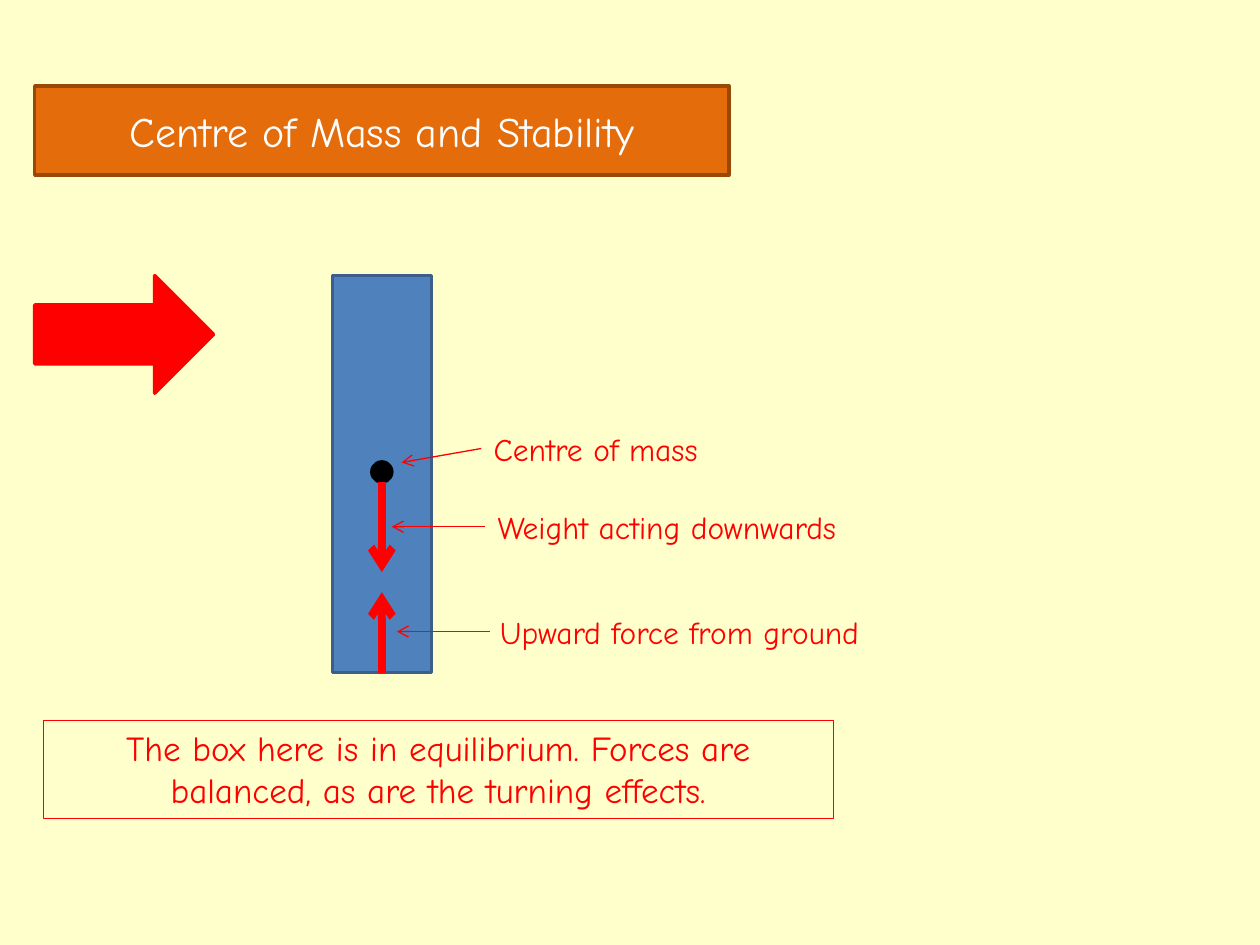
from dataclasses import dataclass

from lxml import etree
from pptx import Presentation
from pptx.dml.color import RGBColor
from pptx.enum import shapes, text
from pptx.oxml import ns
from pptx.util import Pt

CREAM = RGBColor(0xFF, 0xFF, 0xCC)
ORANGE = RGBColor(0xE4, 0x6C, 0x0A)
BROWN = RGBColor(0x98, 0x48, 0x07)
BLUE = RGBColor(0x4F, 0x81, 0xBD)
DARK_BLUE = RGBColor(0x3A, 0x5F, 0x8C)
RED = RGBColor(0xFF, 0x00, 0x00)
BLACK = RGBColor(0x00, 0x00, 0x00)
WHITE = RGBColor(0xFF, 0xFF, 0xFF)
FONT = "Comic Neue"
FORCE_X = 218.2


@dataclass
class Block:
    kind: shapes.MSO_SHAPE
    left: float
    top: float
    width: float
    height: float
    fill: RGBColor | None
    line: RGBColor | None
    line_width: float = 2


@dataclass
class Label:
    wording: str
    left: float
    top: float
    width: float


@dataclass
class Arrow:
    start: tuple[float, float]
    end: tuple[float, float]
    width: float = 0.75


BACKGROUND = Block(shapes.MSO_SHAPE.RECTANGLE, 0, 0, 720, 540, CREAM, None)
BOX = Block(shapes.MSO_SHAPE.RECTANGLE, 190, 157.5, 56.7, 226.8, BLUE, DARK_BLUE)
PUSH = Block(shapes.MSO_SHAPE.RIGHT_ARROW, 19.8, 157.5, 102.2, 67.2, RED, RED)
CAPTION = Block(shapes.MSO_SHAPE.RECTANGLE, 24.8, 411.8, 451.4, 55.8, None, RED, 0.75)
CENTRE = Block(shapes.MSO_SHAPE.OVAL, FORCE_X - 5.7, 264, 11.4, 11.4, BLACK, BLACK)

LABELS = [
    Label("Centre of mass", 275, 242.2, 158.4),
    Label("Weight acting downwards", 277.2, 286.9, 236.2),
    Label("Upward force from ground", 278.6, 347, 251.3),
]
ARROWS = [
    Arrow((275, 256.3), (229.5, 264.3)),
    Arrow((FORCE_X, 275.4), (FORCE_X, 326.9), 4.5),
    Arrow((277.2, 301), (223.9, 301)),
    Arrow((FORCE_X, 384.3), (FORCE_X, 338.4), 4.5),
    Arrow((280.1, 360.9), (226.8, 360.9)),
]


def write(frame, wording: str, size: float, color: RGBColor, align) -> None:
    frame.word_wrap = True
    para = frame.paragraphs[0]
    para.alignment = align
    span = para.add_run()
    span.text = wording
    span.font.name = FONT
    span.font.size = Pt(size)
    span.font.color.rgb = color


def paint(shape, fill: RGBColor | None, line: RGBColor | None, width: float) -> None:
    if fill is None:
        shape.fill.background()
    else:
        shape.fill.solid()
        shape.fill.fore_color.rgb = fill
    if line is None:
        shape.line.fill.background()
    else:
        shape.line.color.rgb = line
        shape.line.width = Pt(width)


def draw_block(slide, block: Block):
    shape = slide.shapes.add_shape(
        block.kind, Pt(block.left), Pt(block.top), Pt(block.width), Pt(block.height))
    shape.shadow.inherit = False
    paint(shape, block.fill, block.line, block.line_width)
    return shape


def draw_title(slide) -> None:
    """Turn the title placeholder into the rounded banner, above the background."""
    title = slide.shapes.title
    title.left, title.top, title.width, title.height = Pt(19.8), Pt(49), Pt(396.7), Pt(51.1)
    outline = etree.SubElement(title.element.spPr, ns.qn("a:prstGeom"), prst="roundRect")
    etree.SubElement(outline, ns.qn("a:avLst"))
    paint(title, ORANGE, BROWN, 2)
    frame = title.text_frame
    frame.auto_size = text.MSO_AUTO_SIZE.NONE
    frame.vertical_anchor = text.MSO_ANCHOR.MIDDLE
    write(frame, "Centre of Mass and Stability", 24, WHITE, text.PP_ALIGN.CENTER)
    slide.shapes.element.append(title.element)


def draw_label(slide, label: Label) -> None:
    box = slide.shapes.add_textbox(
        Pt(label.left), Pt(label.top), Pt(label.width), Pt(29.1))
    write(box.text_frame, label.wording, 18, RED, text.PP_ALIGN.LEFT)
    box.text_frame.auto_size = text.MSO_AUTO_SIZE.SHAPE_TO_FIT_TEXT


def draw_arrow(slide, arrow: Arrow) -> None:
    connector = slide.shapes.add_connector(
        shapes.MSO_CONNECTOR.STRAIGHT, *map(Pt, arrow.start + arrow.end))
    connector.line.color.rgb = RED
    connector.line.width = Pt(arrow.width)
    etree.SubElement(connector.line._get_or_add_ln(), ns.qn("a:tailEnd"), type="arrow")
    etree.SubElement(connector.element.spPr, ns.qn("a:effectLst"))


def main() -> None:
    deck = Presentation()
    deck.slide_width, deck.slide_height = Pt(720), Pt(540)
    slide = deck.slides.add_slide(deck.slide_layouts.get_by_name("Title Only"))
    draw_block(slide, BACKGROUND)
    draw_title(slide)
    draw_block(slide, BOX)
    draw_block(slide, PUSH)
    caption = draw_block(slide, CAPTION).text_frame
    caption.vertical_anchor = text.MSO_ANCHOR.TOP
    write(caption, "The box here is in equilibrium. Forces are balanced, "
          "as are the turning effects.", 20, RED, text.PP_ALIGN.CENTER)
    caption.auto_size = text.MSO_AUTO_SIZE.SHAPE_TO_FIT_TEXT
    draw_block(slide, CENTRE)
    for label in LABELS:
        draw_label(slide, label)
    for arrow in ARROWS:
        draw_arrow(slide, arrow)
    deck.save("out.pptx")


if __name__ == "__main__":
    main()
